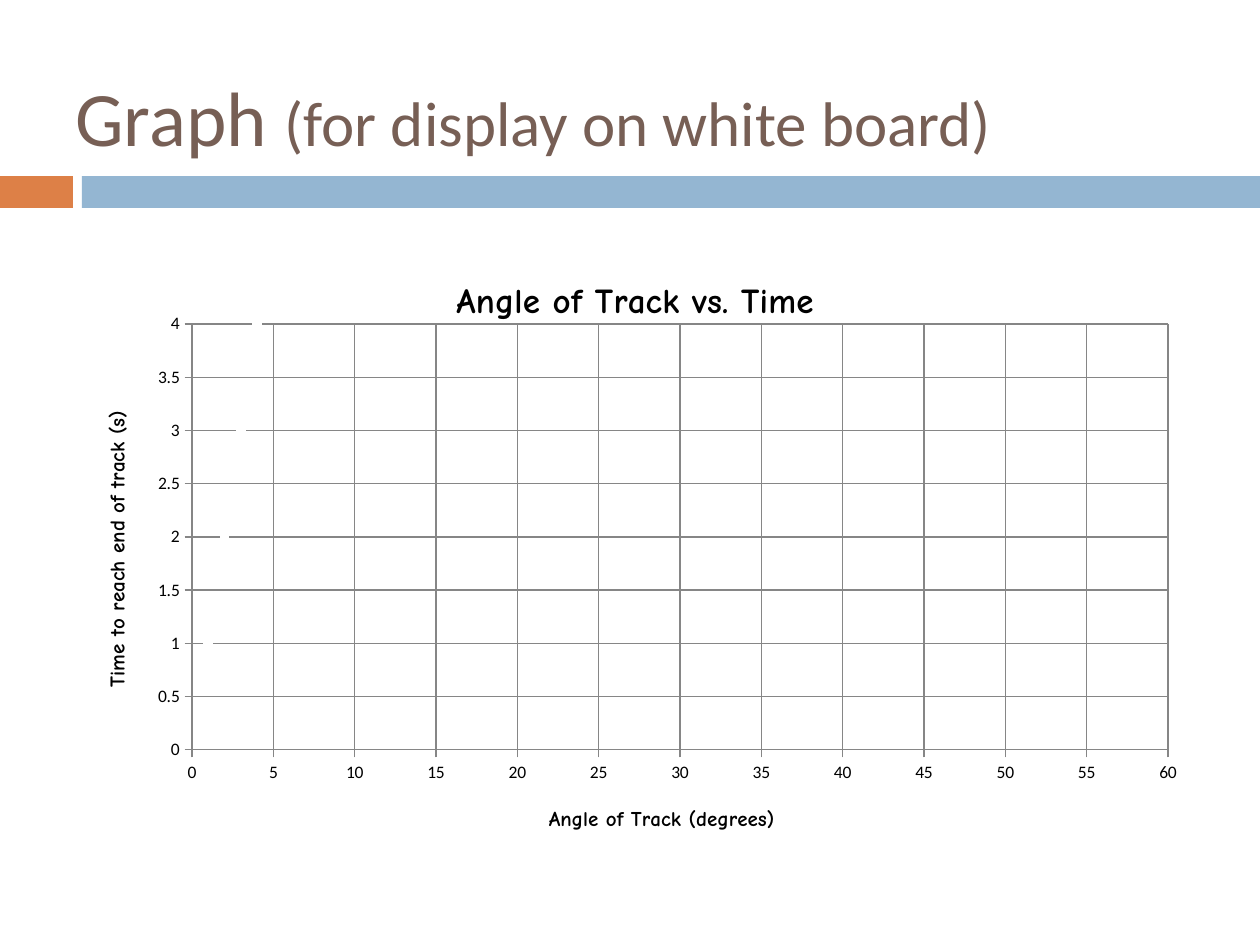
from lxml import etree
from pptx import Presentation
from pptx.chart.data import XyChartData
from pptx.dml.color import RGBColor
from pptx.enum.chart import XL_CHART_TYPE, XL_MARKER_STYLE, XL_TICK_MARK
from pptx.enum.shapes import MSO_SHAPE
from pptx.enum.text import MSO_ANCHOR
from pptx.oxml.ns import qn
from pptx.util import Pt

RECT = MSO_SHAPE.RECTANGLE
SCATTER = XL_CHART_TYPE.XY_SCATTER
SQUARE = XL_MARKER_STYLE.SQUARE
CROSS = XL_TICK_MARK.CROSS
MIDDLE = MSO_ANCHOR.MIDDLE
UNIT = 914400 / 126
WIDE, HIGH = 1124, 620
BODY = "Calibri"
COMIC = "Comic Neue"
BLACK = "000000"
WHITE = "FFFFFF"
GREY = "868686"


def px(n):
    return round(n * UNIT)


def color(code):
    return RGBColor.from_string(code)


def paint(fill, code):
    fill.solid()
    fill.fore_color.rgb = color(code)


def style(font, size, code, name, bold=False):
    font.size = Pt(size)
    font.name = name
    font.bold = bold
    font.color.rgb = color(code)


def place(node, inner=False, **spots):
    for old in node.findall(qn("c:layout")):
        node.remove(old)
    layout = etree.Element(qn("c:layout"))
    manual = etree.SubElement(layout, qn("c:manualLayout"))
    if inner:
        etree.SubElement(manual, qn("c:layoutTarget")).set("val", "inner")
    for key in ("x", "y"):
        etree.SubElement(manual, qn(f"c:{key}Mode")).set("val", "edge")
    for key, val in spots.items():
        part = val / (WIDE if key in "xw" else HIGH)
        etree.SubElement(manual, qn(f"c:{key}")).set("val", str(part))
    node.insert(0 if inner else 1, layout)


class Board:
    def __init__(self, slide):
        self.slide = slide

    def bar(self, x, y, w, h, code):
        shape = self.slide.shapes.add_shape(RECT, px(x), px(y), px(w), px(h))
        shape.shadow.inherit = False
        paint(shape.fill, code)
        shape.line.fill.background()

    def text(self, x, y, w, h, runs, code):
        box = self.slide.shapes.add_textbox(px(x), px(y), px(w), px(h))
        frame = box.text_frame
        frame.word_wrap = True
        frame.vertical_anchor = MIDDLE
        for words, size in runs:
            run = frame.paragraphs[0].add_run()
            run.text = words
            style(run.font, size, code, BODY)

    def title(self, head, words, size, x, y):
        run = head.text_frame.paragraphs[0].add_run()
        run.text = words
        style(run.font, size, BLACK, COMIC, True)
        place(head._element, x=x, y=y)

    def axis(self, axis, top, step, words, x, y):
        axis.minimum_scale = 0
        axis.maximum_scale = top
        axis.major_unit = step
        axis.major_tick_mark = CROSS
        axis.has_major_gridlines = True
        for line in (axis.format.line, axis.major_gridlines.format.line):
            paint(line.fill, GREY)
            line.width = Pt(0.75)
        axis.tick_labels.number_format = "General"
        axis.tick_labels.number_format_is_linked = False
        self.title(axis.axis_title, words, 12, x, y)

    def chart(self, x, y):
        data = XyChartData()
        points = data.add_series("Series 1")
        for n in range(1, 7):
            points.add_data_point(n, n)
        frame = self.slide.shapes.add_chart(SCATTER, px(x), px(y), px(WIDE), px(HIGH), data)
        chart = frame.chart
        style(chart.font, 10, BLACK, BODY)
        chart.has_legend = False
        self.title(chart.chart_title, "Angle of Track vs. Time", 20, 377, 19)
        self.axis(chart.category_axis, 60, 5, "Angle of Track (degrees)", 472, 550)
        self.axis(chart.value_axis, 4, 0.5, "Time to reach end of track (s)", 27, 155)
        plot = chart.plots[0]
        plot.vary_by_categories = False
        series = plot.series[0]
        series.smooth = False
        series.format.line.fill.background()
        mark = series.marker
        mark.style = SQUARE
        mark.size = 5
        paint(mark.format.fill, WHITE)
        mark.format.line.fill.background()
        area = chart._chartSpace.chart.plotArea
        place(area, True, x=119, y=72, w=976, h=426)


def main():
    deck = Presentation()
    deck.slide_width = px(1260)
    deck.slide_height = px(945)
    board = Board(deck.slides.add_slide(deck.slide_layouts[6]))
    board.bar(0, 176, 73, 32, "DD8047")
    board.bar(82, 176, 1178, 32, "94B6D2")
    board.chart(73, 252)
    runs = [("Graph ", 44), ("(for display on white board)", 36)]
    board.text(63, 63, 1040, 106, runs, "775F55")
    deck.save("out.pptx")


if __name__ == "__main__":
    main()
